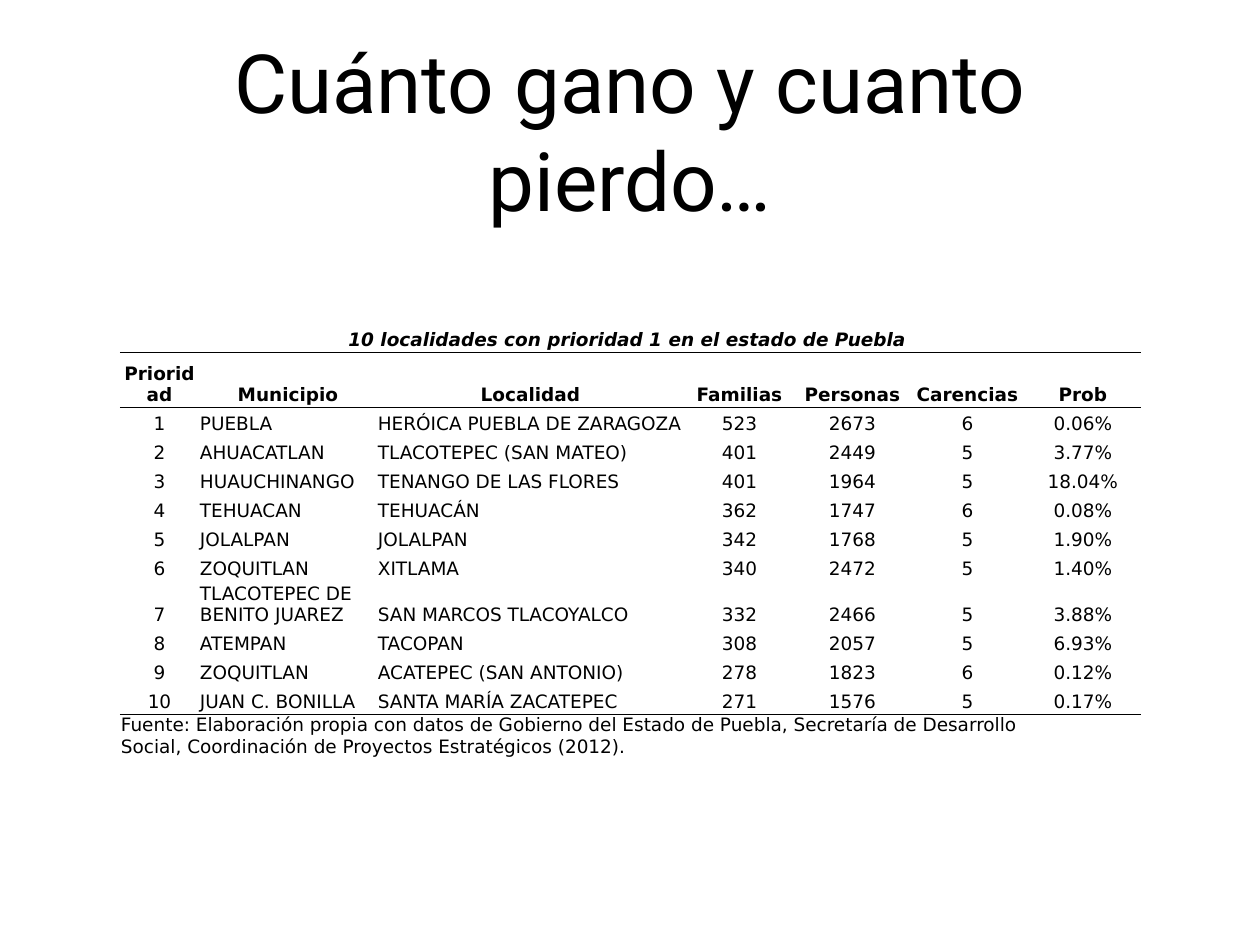
from dataclasses import dataclass

from lxml.etree import SubElement
from pptx import Presentation
from pptx.dml.color import RGBColor
from pptx.enum.text import MSO_ANCHOR as Anchor, MSO_AUTO_SIZE as AutoSize, PP_ALIGN as Align
from pptx.oxml.ns import qn
from pptx.util import Pt

TITLE = "Cuánto gano y cuanto pierdo…"
CAPTION = "10 localidades con prioridad 1 en el estado de Puebla "
HEADERS = ("Prioridad", "Municipio", "Localidad", "Familias", "Personas", "Carencias", "Prob")
LOCALITIES = [
    ("PUEBLA", "HERÓICA PUEBLA DE ZARAGOZA", 523, 2673, 6, "0.06%"),
    ("AHUACATLAN", "TLACOTEPEC (SAN MATEO)", 401, 2449, 5, "3.77%"),
    ("HUAUCHINANGO", "TENANGO DE LAS FLORES", 401, 1964, 5, "18.04%"),
    ("TEHUACAN", "TEHUACÁN", 362, 1747, 6, "0.08%"),
    ("JOLALPAN", "JOLALPAN", 342, 1768, 5, "1.90%"),
    ("ZOQUITLAN", "XITLAMA", 340, 2472, 5, "1.40%"),
    ("TLACOTEPEC DE BENITO JUAREZ", "SAN MARCOS TLACOYALCO", 332, 2466, 5, "3.88%"),
    ("ATEMPAN", "TACOPAN", 308, 2057, 5, "6.93%"),
    ("ZOQUITLAN", "ACATEPEC (SAN ANTONIO)", 278, 1823, 6, "0.12%"),
    ("JUAN C. BONILLA", "SANTA MARÍA ZACATEPEC", 271, 1576, 5, "0.17%"),
]
SOURCE = (
    "Fuente: Elaboración propia con datos de Gobierno del Estado de Puebla, "
    "Secretaría de Desarrollo Social, Coordinación de Proyectos Estratégicos (2012)."
)


@dataclass(frozen=True)
class Theme:
    ink: str = "000000"
    paper: str = "FFFFFF"
    title_font: str = "Roboto"
    table_font: str = "DejaVu Sans"
    title_size: float = 66.4
    table_size: float = 15
    rule_width: float = 0.5


THEME = Theme()
EMU_PER_PX = 914400 / 88.6
SLIDE_SIZE = (1260, 945)
TITLE_BOX = (92, 25, 1076, 209)
TITLE_INSET = 5
TABLE_ORIGIN = (120, 323)
COLUMN_WIDTHS = (79, 178, 307, 111, 115, 115, 116)
ROW_HEIGHT, HEADER_HEIGHT, TWO_LINE_HEIGHT, SOURCE_HEIGHT = 29, 55, 46, 56
CELL_INSET = 1
TWO_LINE_LENGTH = 20
NAME_COLUMNS = (1, 2)


def px(length):
    return round(length * EMU_PER_PX)


def set_insets(target, inset):
    target.margin_left = target.margin_right = px(inset)
    target.margin_top = target.margin_bottom = px(inset)


def add_text(paragraph, text, font_name, size, align, bold=False, italic=False):
    paragraph.alignment = align
    run = paragraph.add_run()
    run.text = text
    font = run.font
    font.name, font.size = font_name, Pt(size)
    font.bold, font.italic = bold, italic
    font.color.rgb = RGBColor.from_string(THEME.ink)


def set_borders(cell, ruled_sides):
    properties = cell._tc.get_or_add_tcPr()
    for side in "LRTB":
        line = SubElement(properties, qn(f"a:ln{side}"), w=str(Pt(THEME.rule_width)))
        if side in ruled_sides:
            fill = SubElement(line, qn("a:solidFill"))
            SubElement(fill, qn("a:srgbClr"), val=THEME.ink)
        else:
            SubElement(line, qn("a:noFill"))


def add_title(slide):
    title = slide.shapes.title
    title.left, title.top, title.width, title.height = map(px, TITLE_BOX)
    frame = title.text_frame
    frame.word_wrap = True
    frame.auto_size = AutoSize.NONE
    frame.vertical_anchor = Anchor.MIDDLE
    set_insets(frame, TITLE_INSET)
    add_text(frame.paragraphs[0], TITLE, THEME.title_font, THEME.title_size, Align.CENTER)


def add_locality_table(slide):
    body = [(rank, *locality) for rank, locality in enumerate(LOCALITIES, 1)]
    rows = [(CAPTION,), HEADERS, *body, (SOURCE,)]
    body_heights = [
        TWO_LINE_HEIGHT if len(locality[0]) > TWO_LINE_LENGTH else ROW_HEIGHT
        for locality in LOCALITIES
    ]
    heights = [ROW_HEIGHT, HEADER_HEIGHT, *body_heights, SOURCE_HEIGHT]
    source_row = len(rows) - 1
    rules_below = (0, 1, source_row - 1)

    size = (sum(COLUMN_WIDTHS), sum(heights))
    table = slide.shapes.add_table(
        len(rows), len(HEADERS), *map(px, TABLE_ORIGIN + size)
    ).table
    table.first_row = table.horz_banding = False
    for column, width in zip(table.columns, COLUMN_WIDTHS):
        column.width = px(width)
    for row, height in zip(table.rows, heights):
        row.height = px(height)
    table.cell(0, 0).merge(table.cell(0, len(HEADERS) - 1))
    table.cell(source_row, 0).merge(table.cell(source_row, len(HEADERS) - 2))

    for row_index, values in enumerate(rows):
        is_source = row_index == source_row
        is_heading = row_index < 2
        ruled_sides = "T" * (row_index - 1 in rules_below) + "B" * (row_index in rules_below)
        for column_index in range(len(HEADERS)):
            cell = table.cell(row_index, column_index)
            set_borders(cell, ruled_sides)
            cell.fill.solid()
            cell.fill.fore_color.rgb = RGBColor.from_string(THEME.paper)
            set_insets(cell, CELL_INSET)
            cell.vertical_anchor = Anchor.TOP if is_source else Anchor.BOTTOM
            if column_index < len(values):
                is_name = not is_heading and column_index in NAME_COLUMNS
                add_text(
                    cell.text_frame.paragraphs[0],
                    str(values[column_index]),
                    THEME.table_font,
                    THEME.table_size,
                    Align.LEFT if is_source or is_name else Align.CENTER,
                    bold=is_heading,
                    italic=row_index == 0,
                )


def main():
    presentation = Presentation()
    presentation.slide_width, presentation.slide_height = map(px, SLIDE_SIZE)
    slide = presentation.slides.add_slide(presentation.slide_layouts[5])
    add_locality_table(slide)
    add_title(slide)
    presentation.save("out.pptx")


if __name__ == "__main__":
    main()
